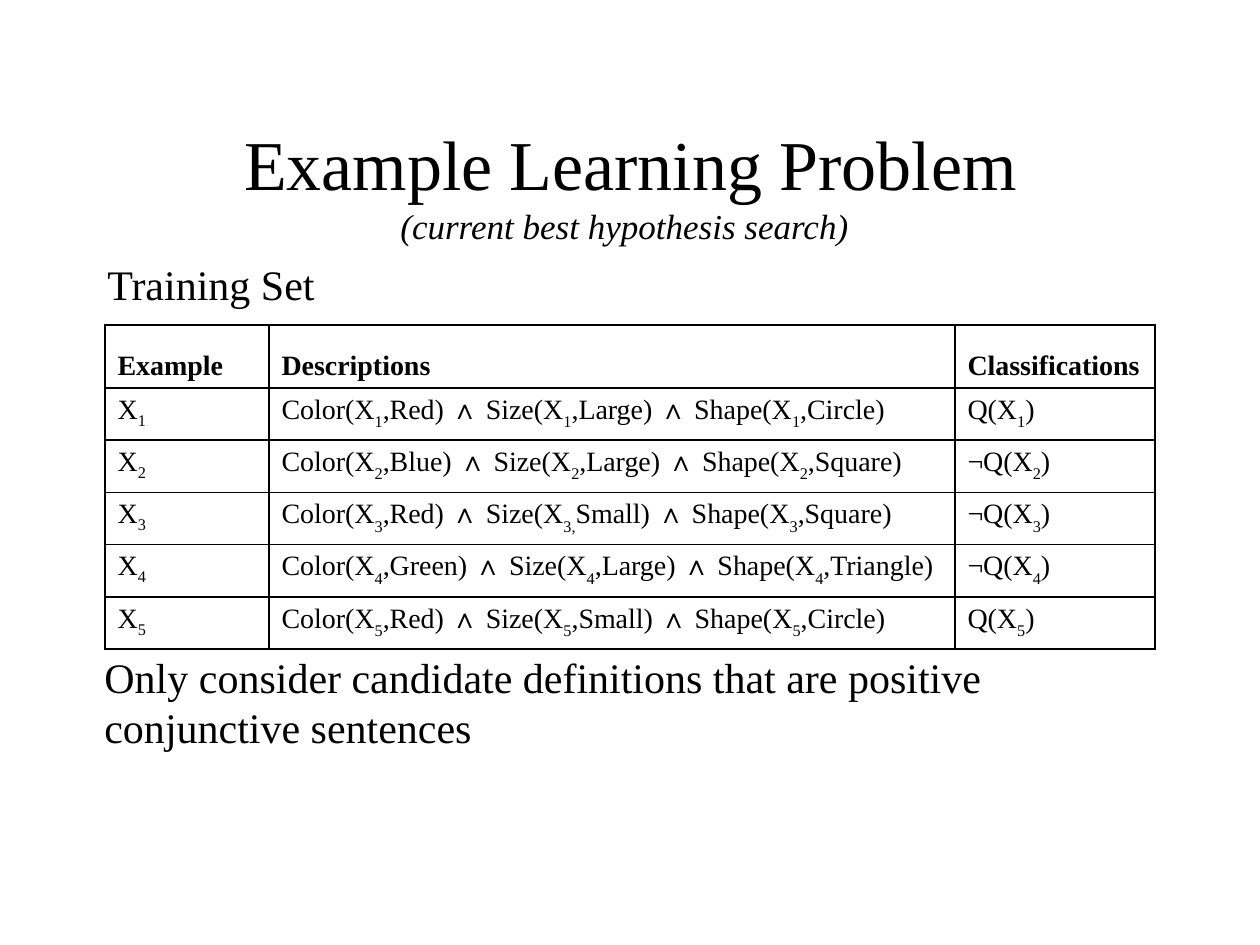
from dataclasses import dataclass

from lxml import etree
from pptx import Presentation
from pptx import util as u
from pptx.dml.color import RGBColor
from pptx.enum import text
from pptx.oxml.ns import qn

PX = u.Inches(1) // 126


@dataclass(frozen=True)
class Theme:
    font: str = "Times New Roman"
    ink: str = "000000"
    title: int = 40
    subtitle: int = 20
    body: int = 24
    cell: int = 16
    border: int = 1


THEME = Theme()
LABEL_DROP, FACT_DROP = -25, -30

COLUMN_WIDTHS = (164, 686, 200)
HEADER_HEIGHT, ROW_HEIGHT = 63, 49
HEADINGS = ("Example", "Descriptions", "Classifications")
# colour, size, shape, whether the example is positive
EXAMPLES = (
    ("Red", "Large", "Circle", True),
    ("Blue", "Large", "Square", False),
    ("Red", "Small", "Square", False),
    ("Green", "Large", "Triangle", False),
    ("Red", "Small", "Circle", True),
)
LOWERED_COMMA_EXAMPLE = 3


def style(para, size, bold=False, italic=False):
    font = para.font
    font.name, font.size = THEME.font, u.Pt(size)
    font.bold, font.italic = bold, italic
    font.color.rgb = RGBColor.from_string(THEME.ink)


def add_text(page, box, words, size, align=text.PP_ALIGN.LEFT,
             anchor=text.MSO_ANCHOR.TOP, wrap=True, italic=False):
    frame = page.shapes.add_textbox(*(n * PX for n in box)).text_frame
    frame.word_wrap = wrap
    frame.vertical_anchor = anchor
    para = frame.paragraphs[0]
    para.text, para.alignment = words, align
    style(para, size, italic=italic)


def add_heading(page, box):
    left, top, width, height = box
    add_text(page, (left, top, width, height), "Example Learning Problem",
             THEME.title, text.PP_ALIGN.CENTER, text.MSO_ANCHOR.MIDDLE)
    add_text(page, (left + 293, top + 114, 475, 54),
             "(current best hypothesis search)", THEME.subtitle,
             wrap=False, italic=True)


def add_borders(cell):
    properties = cell._tc.get_or_add_tcPr()
    for position, side in enumerate(("lnL", "lnR", "lnT", "lnB")):
        line = etree.Element(qn(f"a:{side}"), w=str(u.Pt(THEME.border)))
        fill = etree.SubElement(line, qn("a:solidFill"))
        etree.SubElement(fill, qn("a:srgbClr"), val=THEME.ink)
        properties.insert(position, line)


def fill_cell(cell, pieces, drop=0, bold=False):
    """Write the pieces in turn; every second one is a subscript."""
    cell.fill.background()
    add_borders(cell)
    para = cell.text_frame.paragraphs[0]
    style(para, THEME.cell, bold=bold)
    for position, piece in enumerate(pieces):
        span = para.add_run()
        span.text = piece
        if position % 2:
            span.font._element.set("baseline", str(drop * 1000))


def describe(number, color, size, shape):
    index = str(number)
    size_index, size_value = index, f",{size}"
    if number == LOWERED_COMMA_EXAMPLE:
        size_index, size_value = f"{index},", size
    return ("Color(X", index, f",{color}) ∧ Size(X", size_index,
            f"{size_value}) ∧ Shape(X", index, f",{shape})")


def add_training_table(page, left, top):
    heights = [HEADER_HEIGHT] + [ROW_HEIGHT] * len(EXAMPLES)
    table = page.shapes.add_table(
        len(heights), len(COLUMN_WIDTHS), left * PX, top * PX,
        sum(COLUMN_WIDTHS) * PX, sum(heights) * PX).table
    table.horz_banding = False
    for column, width in zip(table.columns, COLUMN_WIDTHS):
        column.width = width * PX
    for row, height in zip(table.rows, heights):
        row.height = height * PX

    for column, heading in enumerate(HEADINGS):
        cell = table.cell(0, column)
        cell.vertical_anchor = text.MSO_ANCHOR.BOTTOM
        fill_cell(cell, (heading,), bold=True)
    for number, (*features, positive) in enumerate(EXAMPLES, start=1):
        label, facts, verdict = table.rows[number].cells
        fill_cell(label, ("X", str(number)), LABEL_DROP)
        fill_cell(facts, describe(number, *features), FACT_DROP)
        sign = "" if positive else "¬"
        fill_cell(verdict, (f"{sign}Q(X", str(number), ")"), FACT_DROP)


def main():
    deck = Presentation()
    deck.slide_width, deck.slide_height = u.Inches(10), u.Inches(7.5)
    page = deck.slides.add_slide(deck.slide_layouts[6])
    add_heading(page, (95, 84, 1071, 158))
    add_training_table(page, 105, 325)
    add_text(page, (92, 645, 1021, 113),
             "Only consider candidate definitions that are positive "
             "conjunctive sentences", THEME.body)
    add_text(page, (95, 252, 252, 63), "Training Set", THEME.body)
    deck.save("out.pptx")


if __name__ == "__main__":
    main()
